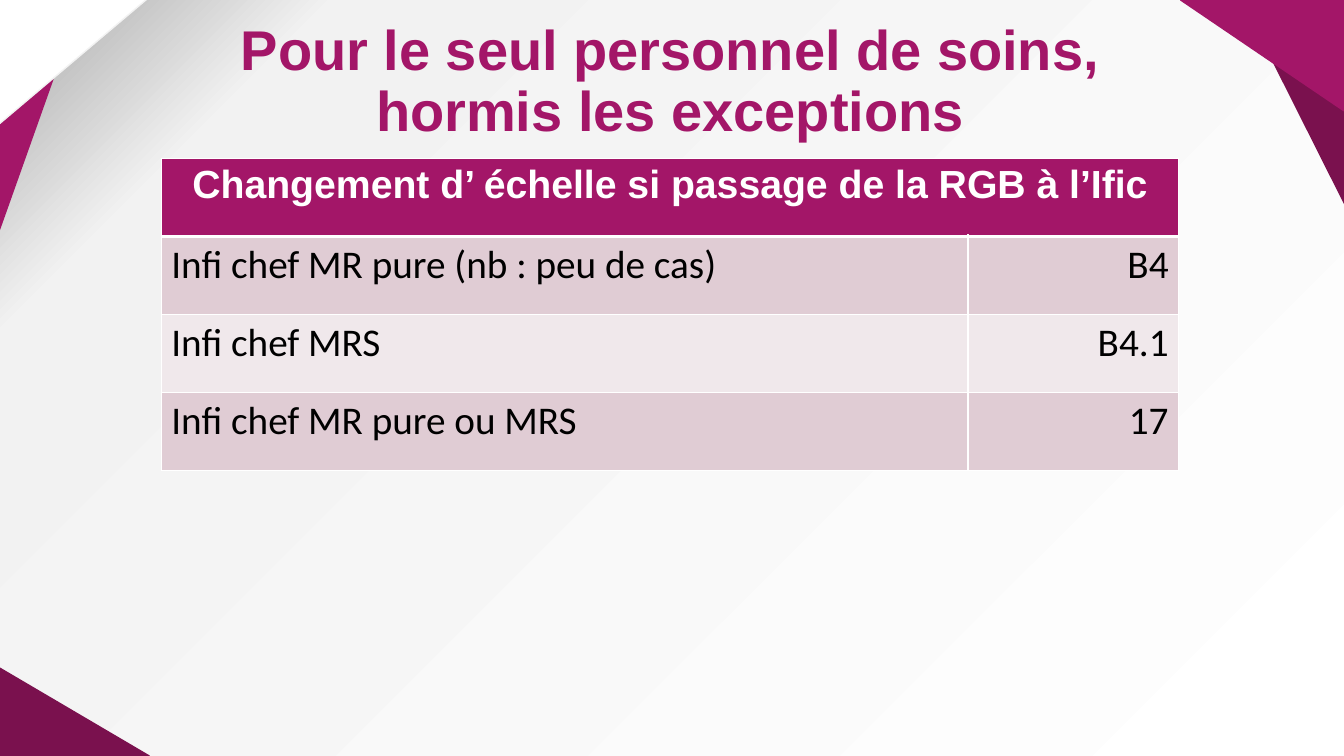
from dataclasses import dataclass

from lxml import etree
from pptx import Presentation
from pptx import util as u
from pptx.dml.color import RGBColor
from pptx.enum import shapes, text
from pptx.oxml import ns, parse_xml

PX = 9144  # EMU per px, 100 px to the inch


@dataclass(frozen=True)
class Theme:
    accent: str = "A31668"
    dark: str = "7A114E"
    white: str = "FFFFFF"
    edge: str = "F2F2F2"
    ink: str = "000000"
    bands: tuple = ("E0CCD4", "F0E8EB")
    backdrop: tuple = ((0, "A6A6A6"), (16, "F2F2F2"), (100, "FFFFFF"))
    head_font: str = "Arial"
    body_font: str = "Calibri"
    title_size: int = 40
    table_size: int = 28


THEME = Theme()


def px(*lengths):
    return [u.Emu(n * PX) for n in lengths]


def write(tf, content, *, font, size, color, bold=False, align=text.PP_ALIGN.LEFT, spacing=None):
    p = tf.paragraphs[0]
    p.alignment = align
    if spacing:
        p.line_spacing = spacing
    for i, line in enumerate(content.split("\n")):
        if i:
            p.add_line_break()
        r = p.add_run()
        r.text = line
        r.font.name, r.font.size, r.font.bold = font, u.Pt(size), bold
        r.font.color.rgb = RGBColor.from_string(color)


def paint_background(slide):
    slide.background.fill.gradient()
    grad = slide.background._cSld.find(".//" + ns.qn("a:gradFill"))
    for child in list(grad):
        grad.remove(child)
    stops = etree.SubElement(grad, ns.qn("a:gsLst"))
    for percent, color in THEME.backdrop:
        stop = etree.SubElement(stops, ns.qn("a:gs"), pos=str(percent * 1000))
        etree.SubElement(stop, ns.qn("a:srgbClr"), val=color)
    etree.SubElement(grad, ns.qn("a:lin"), ang=str(45 * 60000), scaled="0")


def add_corner(slide, box, turn, fill, line):
    """Fill the box with a right triangle: turn 0 is bottom left, 90 top left, 180 top right."""
    x, y, w, h = box
    if turn == 90:  # the frame is stored as it lies before turning
        x, y, w, h = x + (w - h) // 2, y + (h - w) // 2, h, w
    sp = slide.shapes.add_shape(shapes.MSO_SHAPE.RIGHT_TRIANGLE, *px(x, y, w, h))
    sp.rotation = turn
    sp.shadow.inherit = False
    sp.fill.solid()
    sp.fill.fore_color.rgb = RGBColor.from_string(fill)
    sp.line.color.rgb = RGBColor.from_string(line)
    sp.line.width = u.Pt(1)


def add_corners(slide, box):
    x, y, w, h = box
    t = THEME
    right, bottom = x + w, y + h
    add_corner(slide, (x - 1, y, 82, 231), 90, t.accent, t.accent)
    add_corner(slide, (x, bottom - 87, 148, 87), 0, t.dark, t.dark)
    add_corner(slide, (x - 2, y - 1, 149, 126), 90, t.white, t.edge)
    add_corner(slide, (right - 101, y, 102, 203), 180, t.dark, t.dark)
    add_corner(slide, (right - 162, y, 162, 110), 180, t.accent, t.accent)


def add_title(slide, box, content):
    sp = slide.shapes.title
    sp.left, sp.top, sp.width, sp.height = px(*box)
    tf = sp.text_frame
    tf.word_wrap = True
    tf.auto_size = text.MSO_AUTO_SIZE.NONE
    tf.vertical_anchor = text.MSO_ANCHOR.MIDDLE
    tf.margin_bottom, = px(70)
    write(tf, content, font=THEME.head_font, size=THEME.title_size, color=THEME.accent,
          bold=True, align=text.PP_ALIGN.CENTER, spacing=0.9)


def style_cell(cell, fill, top, bottom):
    tc_pr = cell._tc.get_or_add_tcPr()
    for side, width in (("L", 1), ("R", 1), ("T", top), ("B", bottom)):
        tc_pr.append(parse_xml(
            f'<a:ln{side} {ns.nsdecls("a")} w="{u.Pt(width)}"><a:solidFill>'
            f'<a:srgbClr val="{THEME.white}"/></a:solidFill></a:ln{side}>'))
    cell.fill.solid()
    cell.fill.fore_color.rgb = RGBColor.from_string(fill)


def add_scale_table(slide, box, heading, rows, value_width):
    x, y, w, h = box
    table = slide.shapes.add_table(len(rows) + 1, 2, *px(x, y, w, h)).table
    table.columns[0].width, table.columns[1].width = px(w - value_width, value_width)
    for cell in table.rows[0].cells:
        style_cell(cell, THEME.accent, 1, 3)
    head = table.cell(0, 0)
    head.merge(table.cell(0, 1))
    write(head.text_frame, heading, font=THEME.head_font, size=THEME.table_size,
          color=THEME.white, bold=True, align=text.PP_ALIGN.CENTER)
    aligns = (text.PP_ALIGN.LEFT, text.PP_ALIGN.RIGHT)
    for i, row in enumerate(rows):
        for cell, content, align in zip(table.rows[i + 1].cells, row, aligns):
            style_cell(cell, THEME.bands[i % 2], 1 if i else 3, 1)
            write(cell.text_frame, content, font=THEME.body_font, size=THEME.table_size,
                  color=THEME.ink, align=align)


def main():
    prs = Presentation()
    width, height = 1333, 750
    prs.slide_width, prs.slide_height = px(width, height)
    slide = prs.slides.add_slide(prs.slide_layouts.get_by_name("Title Only"))
    paint_background(slide)
    add_corners(slide, (0, 0, width, height))
    add_title(slide, (101, 42, 1127, 145),
              "Pour le seul personnel de soins,\nhormis les exceptions")
    add_scale_table(slide, (160, 157, 1009, 310),
                    "Changement d’ échelle si passage de la RGB à l’Ific",
                    [("Infi chef MR pure (nb : peu de cas)", "B4"),
                     ("Infi chef MRS", "B4.1"),
                     ("Infi chef MR pure ou MRS", "17")],
                    value_width=209)
    prs.save("out.pptx")


if __name__ == "__main__":
    main()
